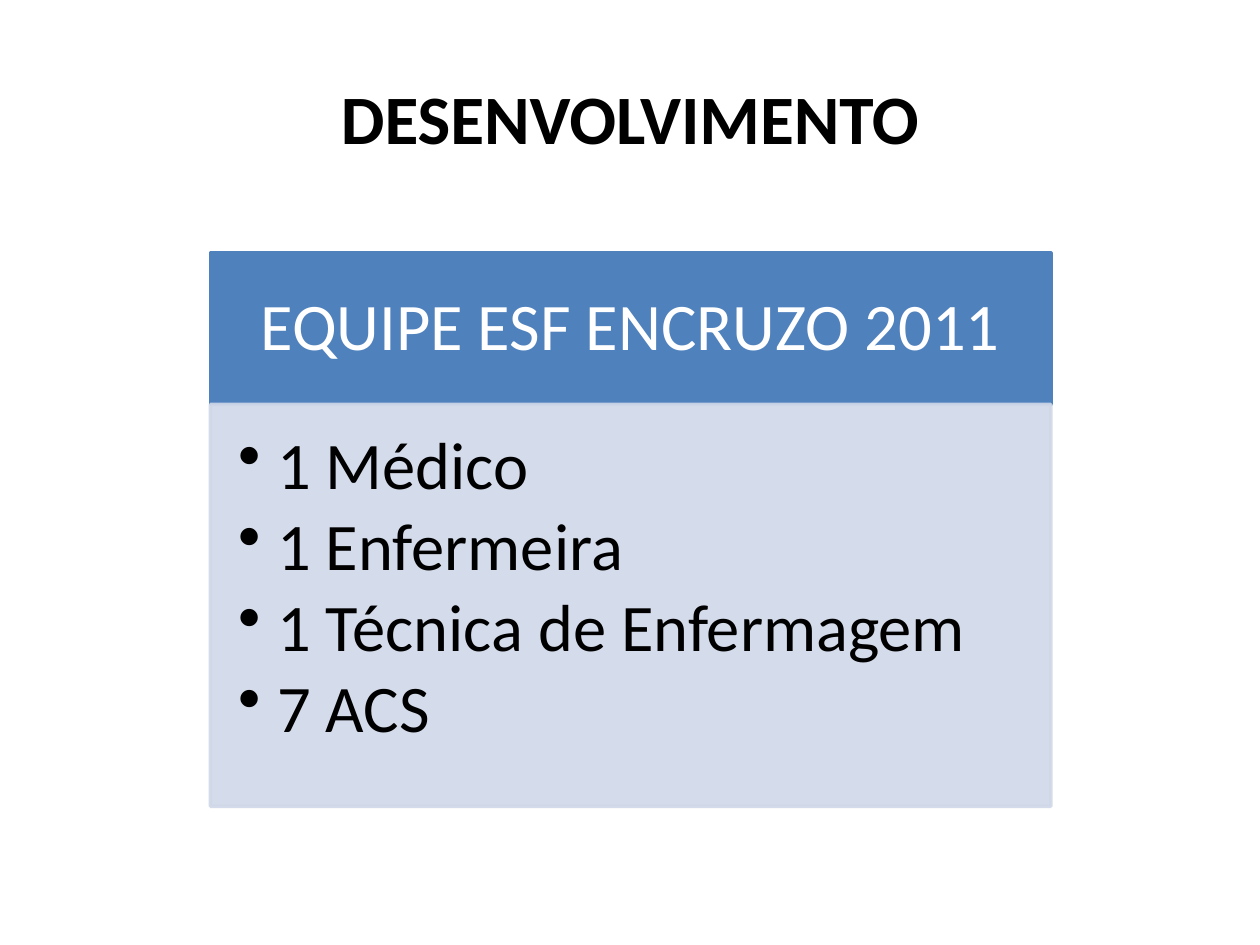
from lxml import etree
from pptx import Presentation
from pptx.dml.color import RGBColor
from pptx.enum import shapes, text
from pptx.oxml import ns
from pptx.util import Inches, Pt

BLUE, PALE = "4F81BD", "D0D8E8"
WHITE, BLACK = "FFFFFF", "000000"


def color(value):
    return RGBColor.from_string(value)


def write(shape, lines, size=38, ink=BLACK, bold=False, align=text.PP_ALIGN.CENTER,
          anchor=text.MSO_ANCHOR.MIDDLE, insets=(0.1, 0.05, 0.1, 0.05),
          spacing=0.9, after=0, bullet=None, indent=0):
    frame = shape.text_frame
    frame.word_wrap = True
    frame.vertical_anchor = anchor
    (frame.margin_left, frame.margin_top,
     frame.margin_right, frame.margin_bottom) = map(Inches, insets)
    for index, line in enumerate(lines):
        paragraph = frame.add_paragraph() if index else frame.paragraphs[0]
        paragraph.text = line
        paragraph.alignment = align
        paragraph.line_spacing = spacing
        paragraph.space_after = Pt(after)
        if bullet:
            properties = paragraph._p.get_or_add_pPr()
            properties.set("marL", str(Inches(indent)))
            properties.set("indent", str(-Inches(indent)))
            etree.SubElement(properties, ns.qn("a:buChar"), char=bullet)
        font = paragraph.font
        font.name, font.size, font.bold = "Calibri", Pt(size), bold
        font.color.rgb = color(ink)


def add_panel(slide, box, shade, alpha=100):
    panel = slide.shapes.add_shape(shapes.MSO_SHAPE.RECTANGLE, *map(Inches, box))
    panel.shadow.inherit = False
    panel.fill.solid()
    panel.fill.fore_color.rgb = color(shade)
    panel.line.color.rgb = color(shade)
    panel.line.width = Pt(2)
    if alpha < 100:
        for tint in panel._element.spPr.iter(ns.qn("a:srgbClr")):
            etree.SubElement(tint, ns.qn("a:alpha"), val=str(alpha * 1000))
    return panel


def add_title(slide, box, title):
    heading = slide.shapes.add_textbox(*map(Inches, box))
    write(heading, [title], size=39.6, bold=True, spacing=1)


def add_team(slide, box, team, members, header_height=1.2):
    left, top, width, height = box
    header = add_panel(slide, (left, top, width, header_height), BLUE)
    write(header, [team], ink=WHITE, insets=(0.3, 0.17, 0.3, 0.17))
    body_box = (left, top + header_height, width, height - header_height)
    body = add_panel(slide, body_box, PALE, alpha=90)
    write(body, members, align=text.PP_ALIGN.LEFT, anchor=text.MSO_ANCHOR.TOP,
          insets=(0.22, 0.22, 0.3, 0.33), after=5.2, bullet="•", indent=0.31)


def main():
    deck = Presentation()
    deck.slide_width, deck.slide_height = Inches(10), Inches(7.5)
    slide = deck.slides.add_slide(deck.slide_layouts[6])
    add_title(slide, (0.5, 0.3, 9, 1.25), "DESENVOLVIMENTO")
    add_team(slide, (1.67, 2.01, 6.67, 4.39), "EQUIPE ESF ENCRUZO 2011",
             ["1 Médico", "1 Enfermeira", "1 Técnica de Enfermagem", "7 ACS"])
    deck.save("out.pptx")


if __name__ == "__main__":
    main()
